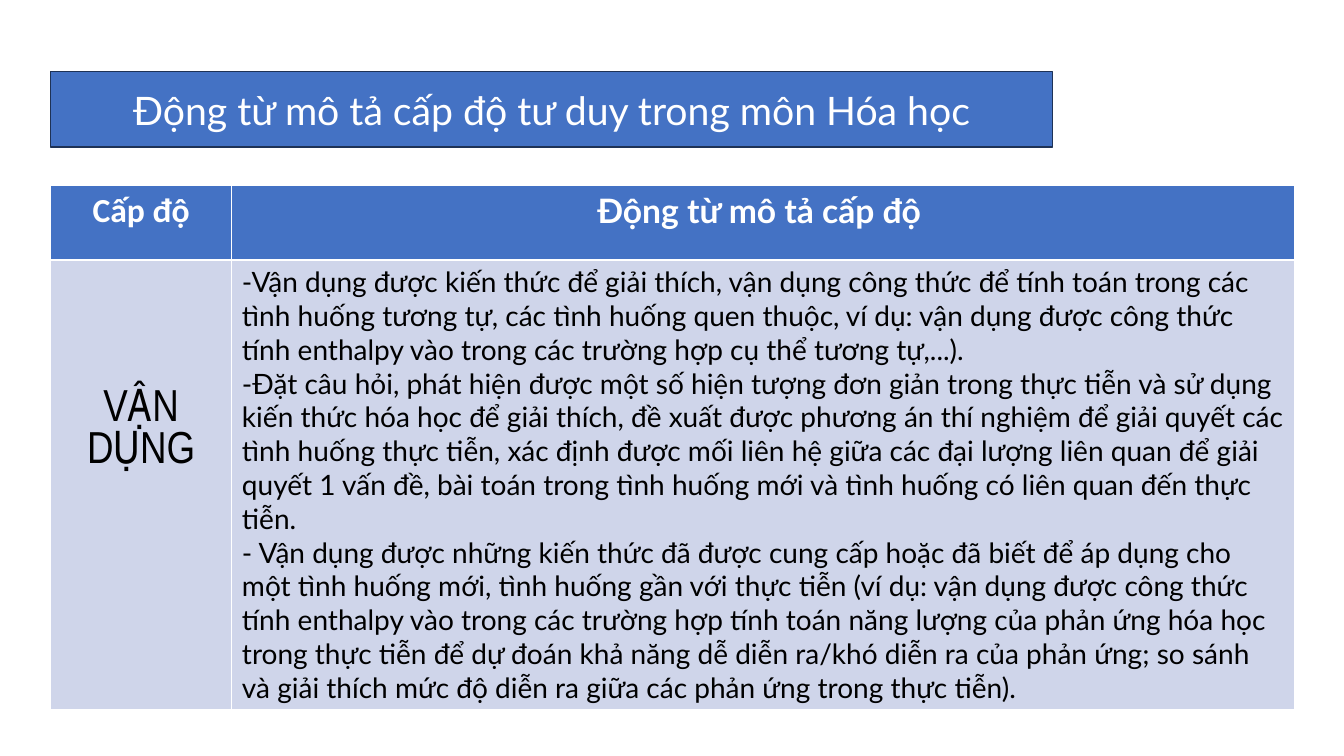
import pptx
import pptx.dml.color
import pptx.enum.text
import pptx.util
from pptx.oxml import parse_xml

In, Pt = pptx.util.Inches, pptx.util.Pt
ALIGN, ANCHOR = pptx.enum.text.PP_ALIGN, pptx.enum.text.MSO_ANCHOR
BLUE, NAVY, PALE, WHITE, BLACK = "4472C4", "1E3256", "CFD5EA", "FFFFFF", "000000"
LEFT, WIDTH = 0.5, 12.34
COLS, ROWS = (1.8, 10.54), (0.74, 4.44)


def rgb(value):
    return pptx.dml.color.RGBColor.from_string(value)


def write(tf, text, size, font="Lato", color=BLACK, bold=False, align=ALIGN.LEFT):
    """Fill a text frame, one paragraph per line of text."""
    tf.text = text
    for p in tf.paragraphs:
        p.alignment = align
        p.line_spacing = 1.0
        p.space_before = Pt(0)
        for r in p.runs:
            r.font.name, r.font.size, r.font.bold = font, Pt(size), bold
            r.font.color.rgb = rgb(color)


prs = pptx.Presentation()
prs.slide_width, prs.slide_height = In(13.33), In(7.5)
s = prs.slides.add_slide(prs.slide_layouts[5])

# Title banner
title = s.shapes.title
title.left, title.top, title.width, title.height = In(LEFT), In(0.71), In(9.94), In(0.75)
title.element.spPr.append(parse_xml(
    '<a:prstGeom xmlns:a="http://schemas.openxmlformats.org/drawingml/2006/main" '
    'prst="roundRect"><a:avLst/></a:prstGeom>'))
title.fill.solid()
title.fill.fore_color.rgb = rgb(BLUE)
title.line.color.rgb = rgb(NAVY)
title.line.width = Pt(1)
title.text_frame.vertical_anchor = ANCHOR.MIDDLE
write(title.text_frame, "Động từ mô tả cấp độ tư duy trong môn Hóa học", 28,
      color=WHITE, align=ALIGN.CENTER)

# Table of levels and their verbs
verbs = "\n".join([
    "-Vận dụng được kiến thức để giải thích, vận dụng công thức để tính toán trong các "
    "tình huống tương tự, các tình huống quen thuộc, ví dụ: vận dụng được công thức "
    "tính enthalpy vào trong các trường hợp cụ thể tương tự,...).",
    "-Đặt câu hỏi, phát hiện được một số hiện tượng đơn giản trong thực tiễn và sử dụng "
    "kiến thức hóa học để giải thích, đề xuất được phương án thí nghiệm để giải quyết các "
    "tình huống thực tiễn, xác định được mối liên hệ giữa các đại lượng liên quan để giải "
    "quyết 1 vấn đề, bài toán trong tình huống mới và tình huống có liên quan đến thực tiễn.",
    "- Vận dụng được những kiến thức đã được cung cấp hoặc đã biết để áp dụng cho "
    "một tình huống mới, tình huống gần với thực tiễn (ví dụ: vận dụng được công thức "
    "tính enthalpy vào trong các trường hợp tính toán năng lượng của phản ứng hóa học "
    "trong thực tiễn để dự đoán khả năng dễ diễn ra/khó diễn ra của phản ứng; so sánh và "
    "giải thích mức độ diễn ra giữa các phản ứng trong thực tiễn).",
])
header = dict(size=24, color=WHITE, bold=True, align=ALIGN.CENTER)
cells = [
    [("Cấp độ", dict(header, font="Calibri")), ("Động từ mô tả cấp độ ", header)],
    [("VẬN DỤNG", dict(size=32, font="Arial Narrow", align=ALIGN.CENTER)),
     (verbs, dict(size=20))],
]
table = s.shapes.add_table(len(ROWS), len(COLS), In(LEFT), In(1.84),
                           In(WIDTH), In(sum(ROWS))).table
for column, width in zip(table.columns, COLS):
    column.width = In(width)
for row, height, fill, contents in zip(table.rows, ROWS, (BLUE, PALE), cells):
    row.height = In(height)
    for cell, (text, style) in zip(row.cells, contents):
        cell.fill.solid()
        cell.fill.fore_color.rgb = rgb(fill)
        write(cell.text_frame, text, **style)
table.cell(1, 0).margin_top = In(1.28)

prs.save("out.pptx")
